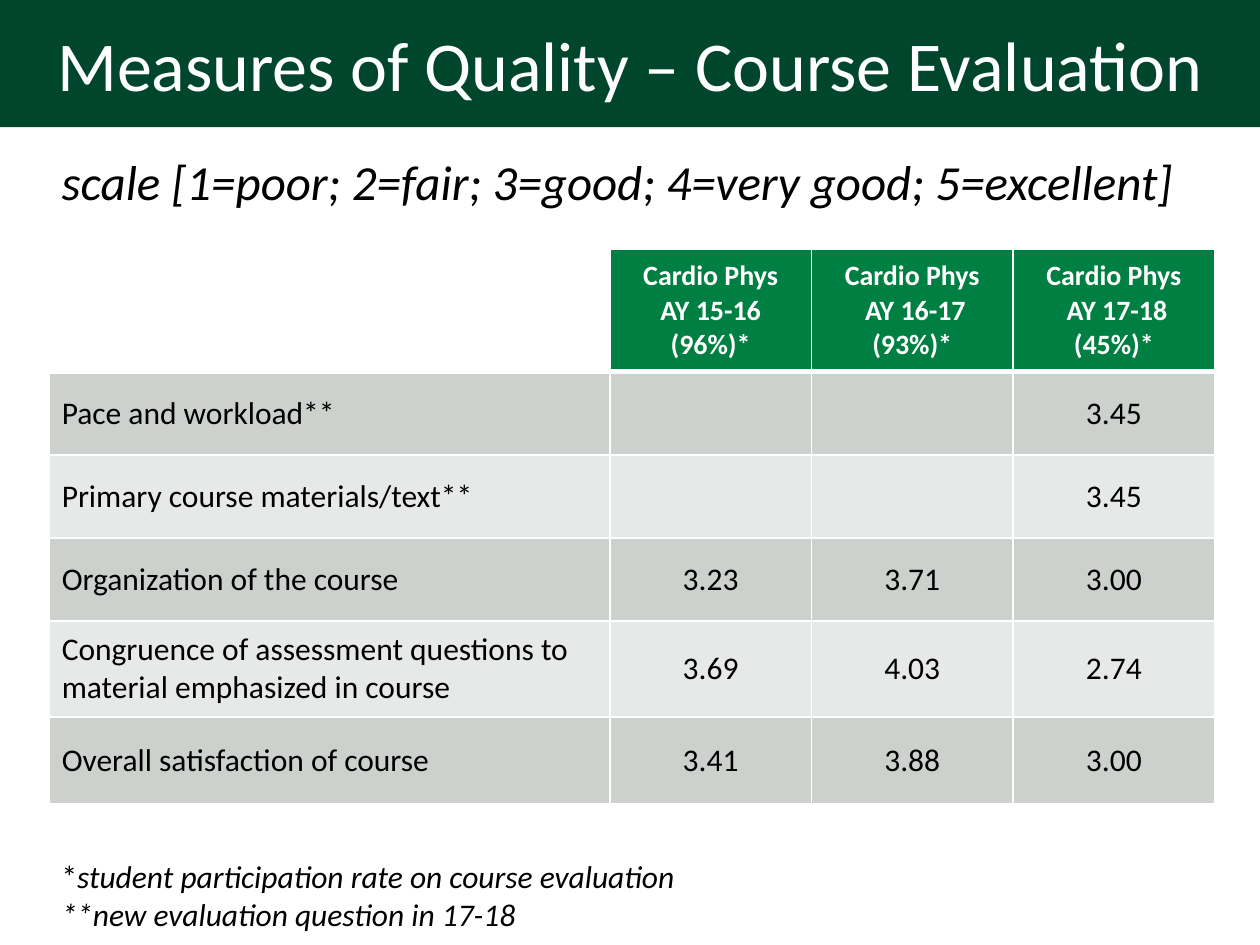
import pptx
import pptx.util
import pptx.dml.color
import pptx.enum.text
import pptx.oxml
import pptx.oxml.ns
from dataclasses import dataclass

Inches = pptx.util.Inches
Pt = pptx.util.Pt
ALIGN = pptx.enum.text.PP_ALIGN
MIDDLE = pptx.enum.text.MSO_ANCHOR.MIDDLE


@dataclass(frozen=True)
class Theme:
    font: str = "Calibri"
    banner: str = "00462D"
    header: str = "007F42"
    dark_band: str = "CCD1CD"
    light_band: str = "E7E9E8"
    white: str = "FFFFFF"
    black: str = "000000"
    title_size: int = 40
    scale_size: int = 28
    header_size: int = 16
    body_size: int = 18


theme = Theme()


def add_run(paragraph, text, size, color, bold=False, italic=False):
    run = paragraph.add_run()
    run.text = text
    font = run.font
    font.name = theme.font
    font.size = Pt(size)
    font.bold = bold
    font.italic = italic
    font.color.rgb = pptx.dml.color.RGBColor.from_string(color)


def add_borders(cell, bottom_width):
    properties = cell._tc.get_or_add_tcPr()
    widths = {"lnL": 1, "lnR": 1, "lnT": 1, "lnB": bottom_width}
    for position, (side, width) in enumerate(widths.items()):
        border = pptx.oxml.parse_xml(
            f'<a:{side} {pptx.oxml.ns.nsdecls("a")} w="{Pt(width)}"><a:solidFill>'
            f'<a:srgbClr val="{theme.white}"/></a:solidFill></a:{side}>'
        )
        properties.insert(position, border)


presentation = pptx.Presentation()
presentation.slide_width = Inches(10)
presentation.slide_height = Inches(7.5)
slide = presentation.slides.add_slide(presentation.slide_layouts[5])

title = slide.shapes.title
title.left, title.top = Inches(0), Inches(0)
title.width, title.height = Inches(10), Inches(1.01)
title.fill.solid()
title.fill.fore_color.rgb = pptx.dml.color.RGBColor.from_string(theme.banner)
title.text_frame.vertical_anchor = MIDDLE
title_paragraph = title.text_frame.paragraphs[0]
title_paragraph.alignment = ALIGN.CENTER
add_run(title_paragraph, "Measures of Quality – Course Evaluation", theme.title_size, theme.white)

scale_box = slide.shapes.add_textbox(Inches(0.39), Inches(1.15), Inches(9.5), Inches(0.8))
scale_box.text_frame.word_wrap = True
add_run(
    scale_box.text_frame.paragraphs[0],
    "scale [1=poor; 2=fair; 3=good; 4=very good; 5=excellent]",
    theme.scale_size,
    theme.black,
    italic=True,
)

rows = [
    ["", "Cardio Phys\nAY 15-16 (96%)*", "Cardio Phys\n AY 16-17 (93%)*", "Cardio Phys\n AY 17-18 (45%)*"],
    ["Pace and workload**", "", "", "3.45"],
    ["Primary course materials/text**", "", "", "3.45"],
    ["Organization of the course", "3.23", "3.71", "3.00"],
    ["Congruence of assessment questions to material emphasized in course", "3.69", "4.03", "2.74"],
    ["Overall satisfaction of course", "3.41", "3.88", "3.00"],
]
column_widths = [4.45, 1.6, 1.6, 1.6]
row_heights = [0.97, 0.66, 0.66, 0.66, 0.76, 0.69]

table = slide.shapes.add_table(
    len(rows), len(column_widths), Inches(0.39), Inches(1.98), Inches(9.24), Inches(4.39)
).table
table.horz_banding = False
for column, width in zip(table.columns, column_widths):
    column.width = Inches(width)
for row, height in zip(table.rows, row_heights):
    row.height = Inches(height)

for row_index, values in enumerate(rows):
    is_header = row_index == 0
    band = theme.dark_band if row_index % 2 else theme.light_band
    size = theme.header_size if is_header else theme.body_size
    color = theme.white if is_header else theme.black
    for column_index, value in enumerate(values):
        cell = table.cell(row_index, column_index)
        cell.vertical_anchor = MIDDLE
        if is_header and not value:
            cell.fill.background()
        else:
            cell.fill.solid()
            cell.fill.fore_color.rgb = pptx.dml.color.RGBColor.from_string(
                theme.header if is_header else band
            )
        add_borders(cell, 3 if is_header else 1)
        if not value:
            continue
        for line_index, line in enumerate(value.split("\n")):
            frame = cell.text_frame
            paragraph = frame.add_paragraph() if line_index else frame.paragraphs[0]
            paragraph.alignment = ALIGN.CENTER if column_index else ALIGN.LEFT
            add_run(paragraph, line, size, color, bold=is_header)

notes_box = slide.shapes.add_textbox(Inches(0.39), Inches(6.75), Inches(5.13), Inches(0.71))
notes_frame = notes_box.text_frame
notes_frame.word_wrap = False
notes_frame.auto_size = pptx.enum.text.MSO_AUTO_SIZE.SHAPE_TO_FIT_TEXT
participation = notes_frame.paragraphs[0]
add_run(participation, "*", theme.body_size, theme.black)
add_run(
    participation, "student participation rate on course evaluation", theme.body_size, theme.black, italic=True
)
add_run(
    notes_frame.add_paragraph(), "**new evaluation question in 17-18", theme.body_size, theme.black, italic=True
)

presentation.save("out.pptx")
